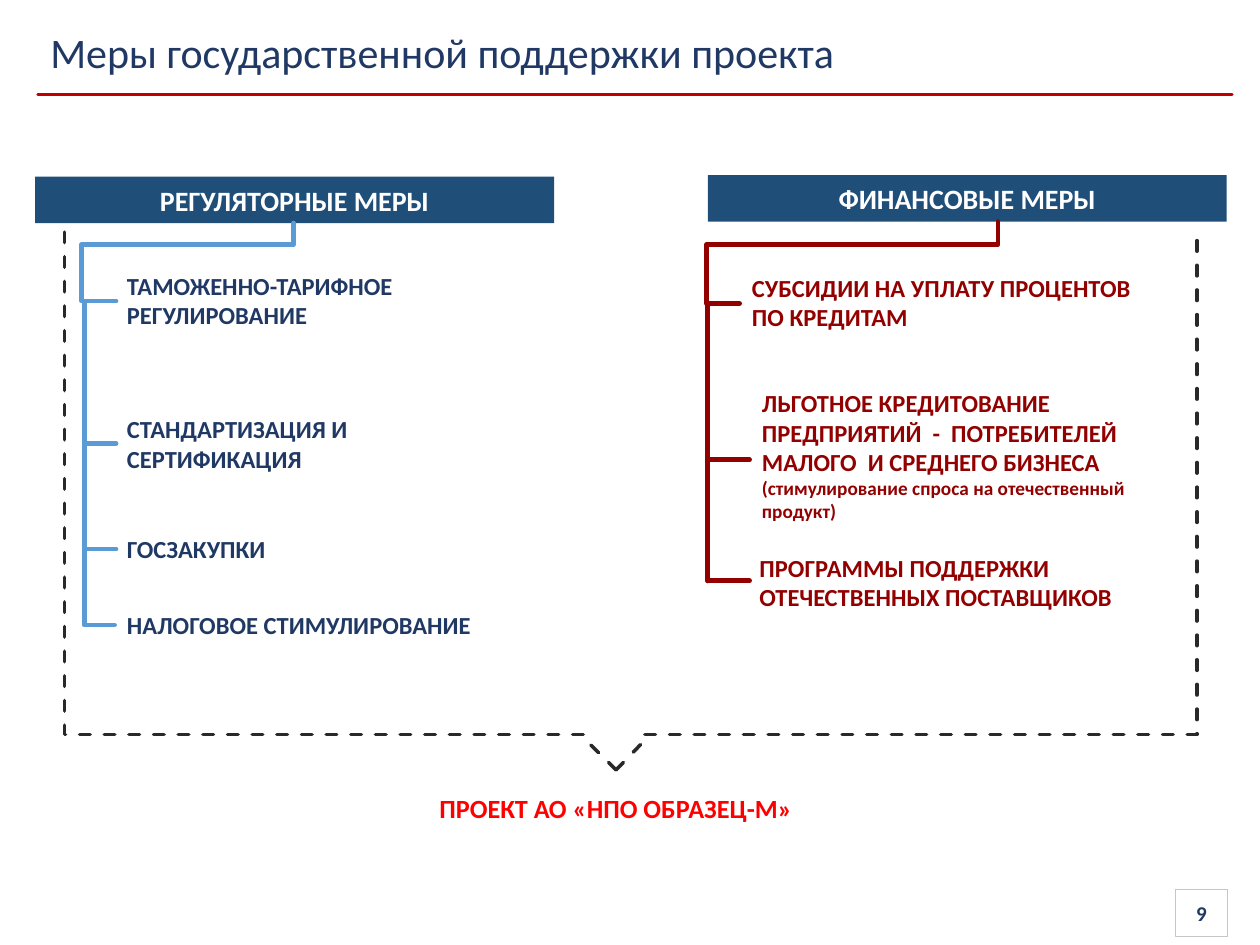
"""Build a slide showing regulatory and financial state support measures for a project."""
from dataclasses import dataclass

from lxml import etree
from pptx import Presentation
from pptx.dml.color import RGBColor
from pptx.enum import dml, shapes, text
from pptx.oxml.ns import qn
from pptx.util import Cm, Pt


@dataclass(frozen=True)
class Theme:
    font: str = "Calibri"
    navy: str = "203864"
    header: str = "1F4E79"
    blue: str = "5B9BD5"
    maroon: str = "920000"
    red: str = "FF0000"
    rule: str = "C00000"
    dark: str = "292929"
    border: str = "C6C6C5"
    white: str = "FFFFFF"
    title_size: float = 24
    header_size: float = 16
    project_size: float = 15
    item_size: float = 14
    number_size: float = 12
    note_size: float = 11
    branch_width: float = 2.75
    dash_width: float = 2
    rule_width: float = 1.5


theme = Theme()


def write(shape, content, size, color, bold=True, align=text.PP_ALIGN.LEFT, anchor=text.MSO_ANCHOR.TOP):
    frame = shape.text_frame
    frame.text = content
    frame.word_wrap = True
    frame.vertical_anchor = anchor
    paragraph = frame.paragraphs[0]
    paragraph.alignment = align
    for run in paragraph.runs:
        run.font.name = theme.font
        run.font.size = Pt(size)
        run.font.bold = bold
        run.font.color.rgb = RGBColor.from_string(color)
    return paragraph


def connect(start, end, color, width, bends=(), dashed=False):
    kind = shapes.MSO_CONNECTOR.ELBOW if bends else shapes.MSO_CONNECTOR.STRAIGHT
    connector = slide.shapes.add_connector(kind, *(Cm(value) for value in start + end))
    connector.line.color.rgb = RGBColor.from_string(color)
    connector.line.width = Pt(width)
    if dashed:
        connector.line.dash_style = dml.MSO_LINE.DASH
    properties = connector._element.spPr
    properties.find(qn("a:ln")).set("cap", "rnd")
    etree.SubElement(properties, qn("a:effectLst"))
    if bends:
        geometry = properties.find(qn("a:prstGeom"))
        geometry.set("prst", f"bentConnector{len(bends) + 2}")
        guides = geometry.find(qn("a:avLst"))
        if guides is None:
            guides = etree.SubElement(geometry, qn("a:avLst"))
        for index, (bend, first, last) in enumerate(zip(bends, start, end), 1):
            share = round((bend - first) / (last - first) * 100000)
            etree.SubElement(guides, qn("a:gd"), name=f"adj{index}", fmla=f"val {share}")
    return connector


presentation = Presentation()
presentation.slide_width, presentation.slide_height = Cm(25.4), Cm(19.05)
slide = presentation.slides.add_slide(presentation.slide_layouts[5])

title = slide.shapes.title
title.left, title.top, title.width, title.height = Cm(0.76), Cm(0.15), Cm(20.73), Cm(1.78)
write(title, "Меры государственной поддержки проекта", theme.title_size, theme.navy,
      bold=False, anchor=text.MSO_ANCHOR.MIDDLE)
connect((0.76, 1.91), (24.84, 1.91), theme.rule, theme.rule_width)

boxes = [
    ("РЕГУЛЯТОРНЫЕ МЕРЫ", 0.71, 3.56, 10.46, 0.94, theme.header, None, theme.header_size, theme.white),
    ("ФИНАНСОВЫЕ МЕРЫ", 14.27, 3.53, 10.46, 0.94, theme.header, None, theme.header_size, theme.white),
    ("9", 23.7, 17.93, 1.04, 0.95, theme.white, theme.border, theme.number_size, theme.navy),
]
for content, left, top, width, height, fill, border, size, color in boxes:
    box = slide.shapes.add_shape(shapes.MSO_SHAPE.RECTANGLE, Cm(left), Cm(top), Cm(width), Cm(height))
    box.shadow.inherit = False
    box.fill.solid()
    box.fill.fore_color.rgb = RGBColor.from_string(fill)
    if border:
        box.line.color.rgb = RGBColor.from_string(border)
        box.line.width = Pt(0.75)
    else:
        box.line.fill.background()
    write(box, content, size, color, align=text.PP_ALIGN.CENTER, anchor=text.MSO_ANCHOR.MIDDLE)

items = [
    ("ТАМОЖЕННО-ТАРИФНОЕ РЕГУЛИРОВАНИЕ", 2.31, 5.33, 7.59, 1.45, theme.navy),
    ("СТАНДАРТИЗАЦИЯ И СЕРТИФИКАЦИЯ", 2.31, 8.23, 7.59, 1.45, theme.navy),
    ("ГОСЗАКУПКИ", 2.31, 10.64, 7.59, 0.86, theme.navy),
    ("НАЛОГОВОЕ СТИМУЛИРОВАНИЕ", 2.31, 12.17, 7.59, 0.86, theme.navy),
    ("СУБСИДИИ НА УПЛАТУ ПРОЦЕНТОВ ПО КРЕДИТАМ", 14.91, 5.38, 8.74, 1.45, theme.maroon),
    ("ПРОГРАММЫ ПОДДЕРЖКИ ОТЕЧЕСТВЕННЫХ ПОСТАВЩИКОВ", 15.06, 11.02, 8.59, 1.45, theme.maroon),
    ("ЛЬГОТНОЕ КРЕДИТОВАНИЕ ПРЕДПРИЯТИЙ  -  ПОТРЕБИТЕЛЕЙ  МАЛОГО  И СРЕДНЕГО БИЗНЕСА ",
     15.11, 7.7, 8.59, 3, theme.maroon),
]
for content, left, top, width, height, color in items:
    box = slide.shapes.add_textbox(Cm(left), Cm(top), Cm(width), Cm(height))
    paragraph = write(box, content, theme.item_size, color)

note = paragraph.add_run()
note.text = "(стимулирование спроса на отечественный продукт)"
note.font.name = theme.font
note.font.size = Pt(theme.note_size)
note.font.bold = True
note.font.color.rgb = RGBColor.from_string(theme.maroon)

connect((2.31, 6.07), (5.92, 4.5), theme.blue, theme.branch_width, bends=(1.65, 4.93))
branch_levels = [6.07, 8.94, 11.07, 12.6]
for upper, lower in zip(branch_levels, branch_levels[1:]):
    connect((2.34, upper), (2.31, lower), theme.blue, theme.branch_width, bends=(1.7,))

connect((14.91, 6.12), (20.12, 4.47), theme.maroon, theme.branch_width, bends=(14.25, 4.93))
connect((14.27, 6.12), (14.27, 11.71), theme.maroon, theme.branch_width)
for level in (9.27, 11.71):
    connect((14.27, level), (15.11, level), theme.maroon, theme.branch_width)

for start, side, top in ((11.76, 1.3, 4.57), (13, 24.13, 4.65)):
    connect((start, 14.81), (side, top), theme.dark, theme.dash_width, bends=(side,), dashed=True)
for side in (11.81, 13):
    connect((12.42, 15.52), (side, 14.92), theme.dark, theme.dash_width, dashed=True)

project = slide.shapes.add_textbox(Cm(7.54), Cm(15.85), Cm(9.75), Cm(0.89))
write(project, "ПРОЕКТ АО «НПО ОБРАЗЕЦ-М»", theme.project_size, theme.red, align=text.PP_ALIGN.CENTER)

presentation.save("out.pptx")
